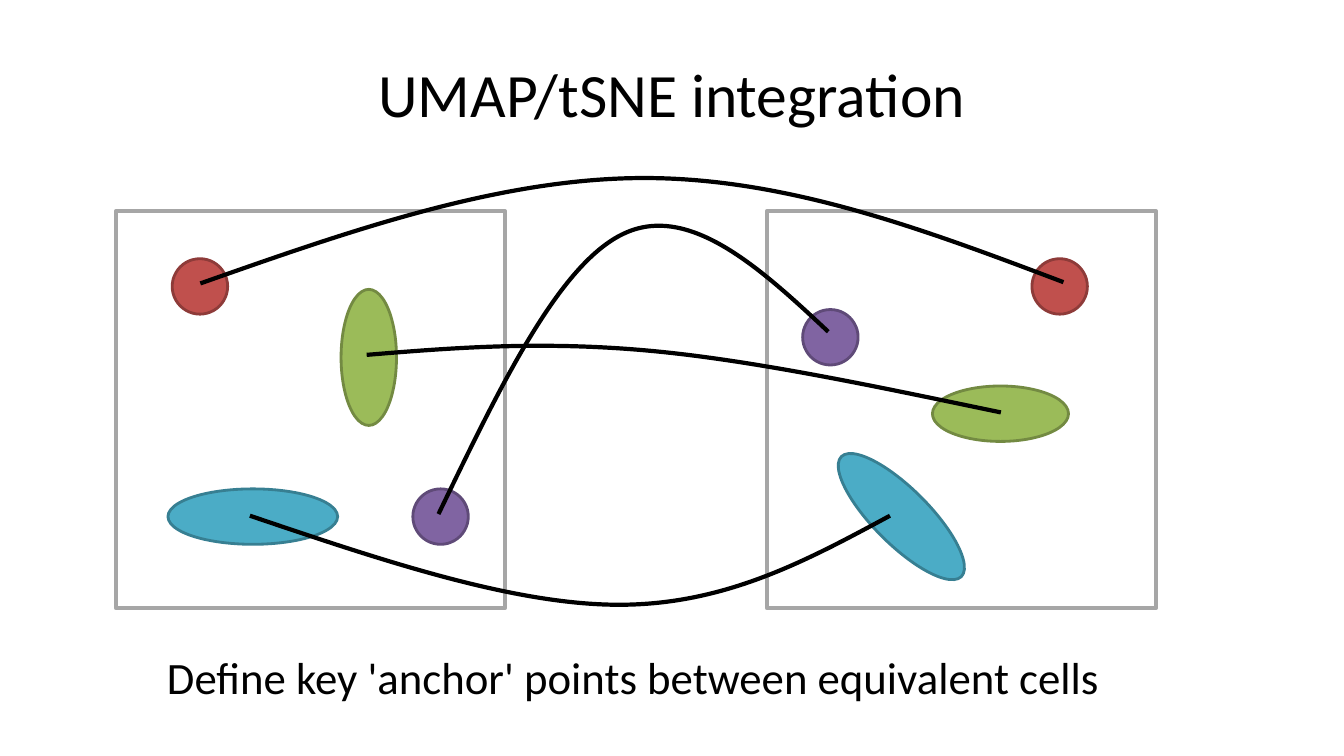
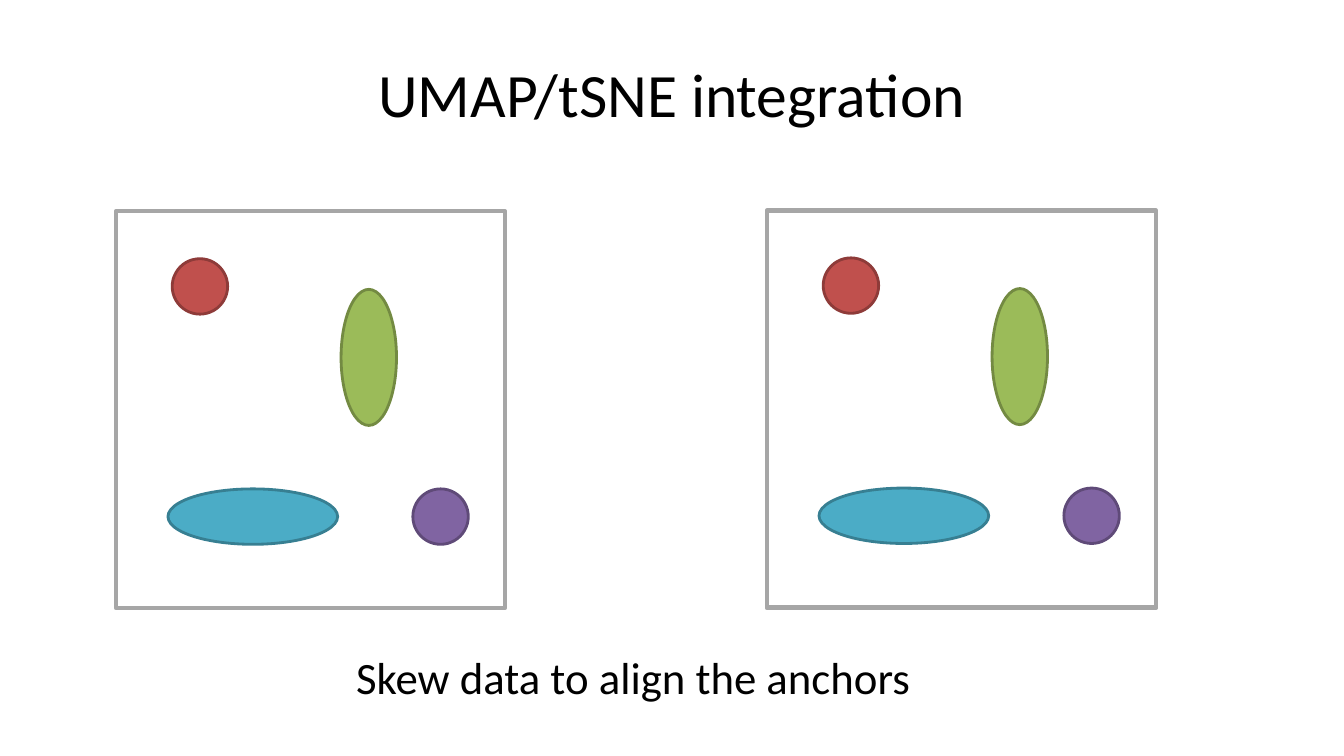
from lxml import etree
from pptx import Presentation, util as u
from pptx.dml.color import RGBColor
from pptx.enum import shapes, text
from pptx.oxml.ns import qn

BLACK = RGBColor(0x00, 0x00, 0x00)
WHITE = RGBColor(0xFF, 0xFF, 0xFF)
GREY = RGBColor(0xA6, 0xA6, 0xA6)

# Cell kinds: fill, outline, width, height
KINDS = {
    "red": (RGBColor(0xC0, 0x50, 0x4D), RGBColor(0x8E, 0x3B, 0x39), 6.6, 6.6),
    "green": (RGBColor(0x9B, 0xBB, 0x59), RGBColor(0x73, 0x8A, 0x42), 6.6, 16.2),
    "blue": (RGBColor(0x4B, 0xAC, 0xC6), RGBColor(0x37, 0x7F, 0x92), 20.2, 6.6),
    "purple": (RGBColor(0x80, 0x64, 0xA2), RGBColor(0x5F, 0x4A, 0x78), 6.6, 6.6),
}

deck = Presentation()
deck.slide_width, deck.slide_height = u.Inches(13.333), u.Inches(7.5)

# The slide is a grid of 160 columns by 90 rows
CELL = deck.slide_height / 90

# Panels: left edges, top, size
LEFT, RIGHT, TOP = 13.8, 91.3, 25.15
WIDE, HIGH = 46.3, 47.25

# Cells in a panel: centre from the panel's corner, rotation
ALIGNED = {"red": (10, 8.95, 0), "green": (30.1, 17.4, 0),
           "blue": (16.3, 36.35, 0), "purple": (38.65, 36.35, 0)}
SKEWED = {"red": (34.85, 8.95, 0), "green": (27.8, 24.1, 270),
          "blue": (16, 36.35, 45), "purple": (7.55, 15, 0)}

# Anchor curves: two cubic arcs that share their middle point
CURVES = [
    [(23.85, 33.75), (41.6, 27.5), (59.5, 21.2), (76.7, 21.2),
     (93.8, 21.2), (110.2, 27.4), (126.6, 33.6)],
    [(43.65, 42.25), (53.9, 41.4), (64.1, 40.6), (76.7, 41.7),
     (89.3, 42.8), (104.2, 46), (119.15, 49.1)],
    [(52.2, 61.2), (59.4, 46.3), (66.5, 31.4), (74.3, 27.8),
     (82, 24.2), (90.4, 31.8), (98.6, 39.5)],
    [(29.75, 61.4), (45.4, 66.7), (61.1, 72), (73.7, 72),
     (86.4, 72), (96.1, 66.7), (105.95, 61.4)],
]

# Slides: caption, panels (left, top, cells), curves
SLIDES = [
    ("Define key 'anchor' points between equivalent cells",
     [(LEFT, TOP, ALIGNED), (RIGHT, TOP, SKEWED)], CURVES),
    ("Skew data to align the anchors",
     [(LEFT, TOP, ALIGNED), (RIGHT, TOP, {}), (RIGHT, TOP - 0.1, ALIGNED)], []),
]


def write(box, words, at, size, anchor, before=0):
    box.left, box.top, box.width, box.height = [round(n * CELL) for n in at]
    frame = box.text_frame
    frame.word_wrap = True
    frame.vertical_anchor = anchor
    para = frame.paragraphs[0]
    para.alignment = text.PP_ALIGN.CENTER
    para.space_before = u.Pt(before)
    run = para.add_run()
    run.text = words
    run.font.name, run.font.size = "Calibri", u.Pt(size)
    run.font.color.rgb = BLACK


def draw(panel, kind, at, fill, line, weight):
    shape = panel.shapes.add_shape(kind, *[round(n * CELL) for n in at])
    shape.shadow.inherit = False
    shape.fill.solid()
    shape.fill.fore_color.rgb = fill
    shape.line.color.rgb = line
    shape.line.width = u.Pt(weight)
    return shape


for caption, panels, curves in SLIDES:
    # Title and caption
    slide = deck.slides.add_slide(deck.slide_layouts[5])
    write(slide.shapes.title, "UMAP/tSNE integration", at=(8, 3.6, 144, 15),
          size=44, anchor=text.MSO_ANCHOR.MIDDLE)
    write(slide.shapes.add_textbox(0, 0, 0, 0), caption,
          at=(3.4, 76.8, 144, 11.2), size=32,
          anchor=text.MSO_ANCHOR.TOP, before=6.4)

    # Panels with their cells, grouped where no curve joins them
    for left, top, cells in panels:
        panel = slide if curves else slide.shapes.add_group_shape()
        draw(panel, shapes.MSO_SHAPE.RECTANGLE, (left, top, WIDE, HIGH),
             WHITE, GREY, 3)
        for name, (x, y, turn) in cells.items():
            fill, line, wide, high = KINDS[name]
            at = (left + x - wide / 2, top + y - high / 2, wide, high)
            oval = draw(panel, shapes.MSO_SHAPE.OVAL, at, fill, line, 2)
            oval.rotation = turn

    # Curves between matching cells
    for knots in curves:
        dots = [(round(x * CELL), round(y * CELL)) for x, y in knots]
        route = slide.shapes.build_freeform(*dots[0])
        route.add_line_segments(dots[3::3], close=False)
        curve = route.convert_to_shape()
        curve.shadow.inherit = False
        curve.fill.background()
        curve.line.color.rgb = BLACK
        curve.line.width = u.Pt(3)

        # Bend each straight segment into a cubic arc
        lines = list(curve.element.iter(qn("a:lnTo")))
        for line, arc in zip(lines, (dots[1:4], dots[4:])):
            bend = etree.Element(qn("a:cubicBezTo"))
            for x, y in arc:
                etree.SubElement(bend, qn("a:pt"), x=str(x - curve.left),
                                 y=str(y - curve.top))
            line.getparent().replace(line, bend)

deck.save("out.pptx")
